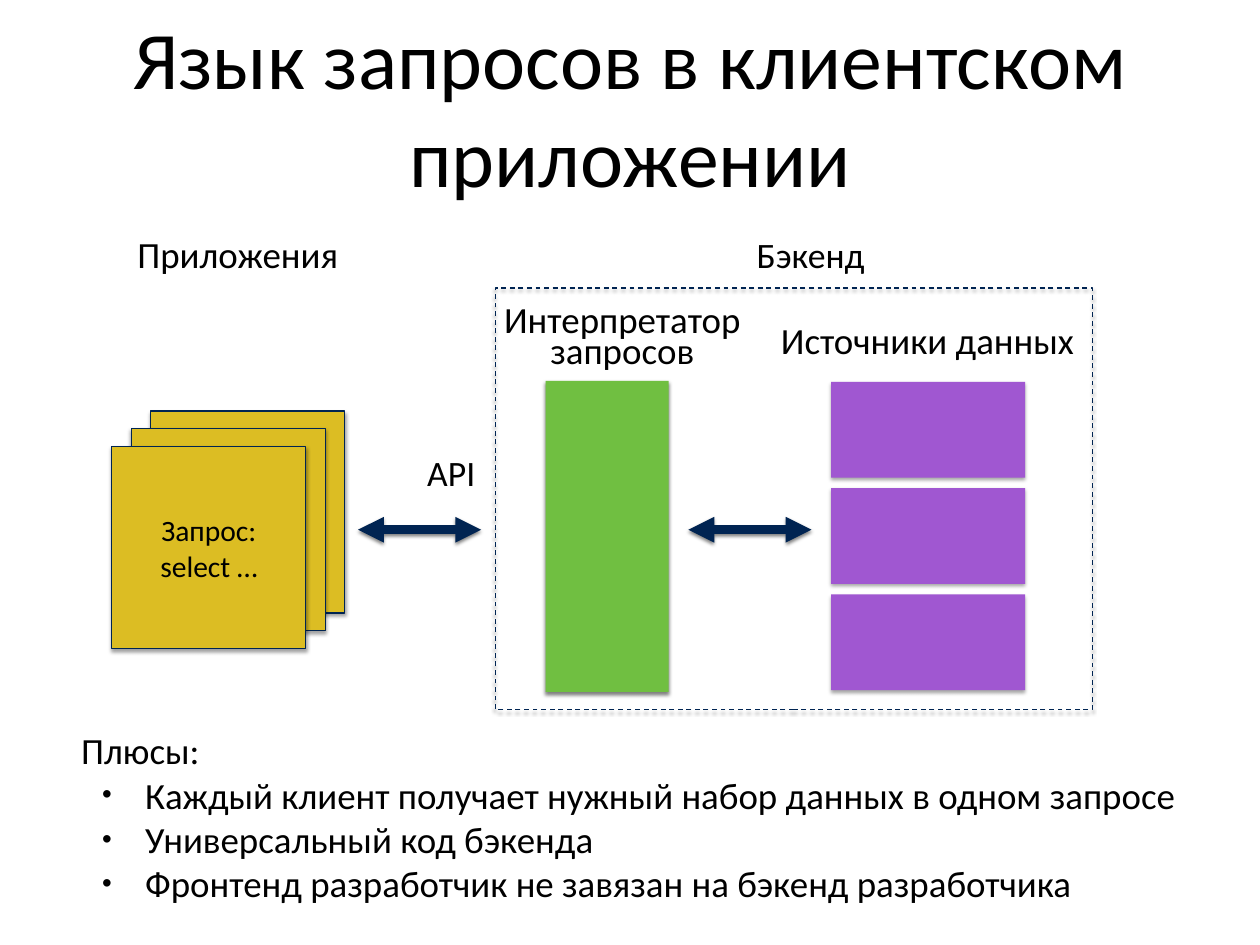
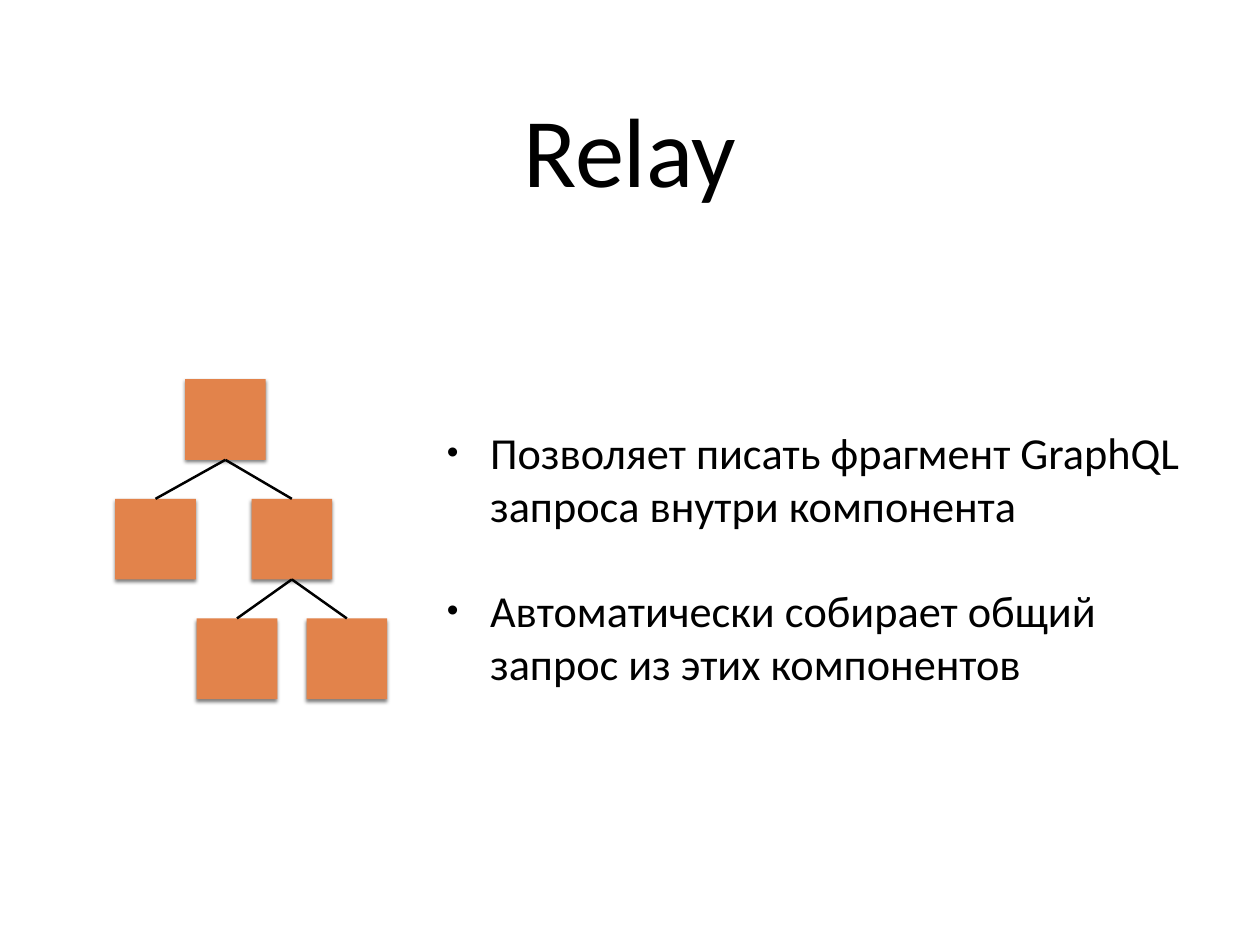
import pptx
import pptx.util
import pptx.dml.color
import pptx.enum.dml
import pptx.enum.shapes
import pptx.enum.text
import pptx.oxml
import pptx.oxml.ns

Pt = pptx.util.Pt
qn = pptx.oxml.ns.qn
ALIGN = pptx.enum.text.PP_ALIGN
FONT = "Calibri"
BLACK, NAVY = "000000", "002452"
GREEN, PURPLE, GOLD, ORANGE = "70BF41", "A057D1", "DCBD23", "E2834B"


def paint(color, value):
    color.rgb = pptx.dml.color.RGBColor.from_string(value)


def node(parent, tag, **attrs):
    child = parent.makeelement(qn(tag), attrs)
    parent.append(child)
    return child


def shade(shape, alpha):
    props = shape.element.spPr
    effect = props.find(qn("a:effectLst"))
    if effect is None:
        effect = node(props, "a:effectLst")
    if alpha:
        outer = node(effect, "a:outerShdw", blurRad=str(Pt(3)), dist=str(Pt(2)),
                     dir="5400000", rotWithShape="0")
        node(node(outer, "a:srgbClr", val=BLACK), "a:alpha", val=str(alpha * 1000))


def write(shape, text, size, align=ALIGN.CENTER, wrap=True, space=None):
    frame = shape.text_frame
    frame.text = text
    frame.word_wrap = wrap
    frame.auto_size = pptx.enum.text.MSO_AUTO_SIZE.NONE
    frame.vertical_anchor = pptx.enum.text.MSO_ANCHOR.MIDDLE
    frame.margin_left = frame.margin_right = Pt(4)
    frame.margin_top = frame.margin_bottom = Pt(4)
    for par in frame.paragraphs:
        par.alignment = align
        par.line_spacing = space
        for run in par.runs:
            run.font.name = FONT
            run.font.size = Pt(size)
            paint(run.font.color, BLACK)
    return frame.paragraphs


def title(slide, text, top, size):
    shape = slide.shapes.title
    shape.left, shape.top, shape.width, shape.height = Pt(75), Pt(top), Pt(874), Pt(170)
    write(shape, text, size)


def label(slide, text, box, size=30, **style):
    shape = slide.shapes.add_textbox(*map(Pt, box))
    return write(shape, text, size, **style)


def indent(par, left, first):
    props = par._p.get_or_add_pPr()
    props.set("marL", str(Pt(left)))
    props.set("indent", str(Pt(first)))
    return props


def bullet(par, left):
    props = indent(par, left, -35)
    node(props, "a:buSzPct", val="75000")
    node(props, "a:buFont", typeface="Arial")
    node(props, "a:buChar", char="•")


def block(slide, box, fill=None, line=None, alpha=50):
    kind = pptx.enum.shapes.MSO_SHAPE.RECTANGLE
    shape = slide.shapes.add_shape(kind, *map(Pt, box))
    if fill:
        shape.fill.solid()
        paint(shape.fill.fore_color, fill)
    else:
        shape.fill.background()
    if line:
        paint(shape.line.color, line)
        shape.line.width = Pt(1)
    else:
        shape.line.fill.background()
    shape.shadow.inherit = False
    shade(shape, alpha)
    return shape


def link(slide, start, end, color, width, heads=False, alpha=0):
    kind = pptx.enum.shapes.MSO_CONNECTOR.STRAIGHT
    line = slide.shapes.add_connector(kind, *map(Pt, start + end))
    paint(line.line.color, color)
    line.line.width = Pt(width)
    if heads:
        stroke = line.element.spPr.find(qn("a:ln"))
        for tag in ("a:headEnd", "a:tailEnd"):
            node(stroke, tag, type="triangle")
    shade(line, alpha)


def query(slide):
    title(slide, "Язык запросов в клиентском приложении", 1, 66.4)
    pars = label(slide, "Плюсы:\n"
                 "Каждый клиент получает нужный набор данных в одном запросе\n"
                 "Универсальный код бэкенда\n"
                 "Фронтенд разработчик не завязан на бэкенд разработчика",
                 (44, 544, 993, 239), align=ALIGN.LEFT)
    indent(pars[0], 0, 18)
    for par in pars[1:]:
        bullet(par, 70)

    block(slide, (443.5, 309.6, 100, 252.7), GREEN)
    for row in range(3):
        block(slide, (675.4, 310.3 + 86.4 * row, 157.7, 77.8), PURPLE, alpha=35)
    for left in (291, 559.5):
        link(slide, (left, 430.5), (left + 100, 430.5), NAVY, 7, heads=True, alpha=50)
    for step in range(3):
        card = block(slide, (122.5 - 15.8 * step, 334 + 14.4 * step, 157.7, 164.2),
                     GOLD, NAVY, 37)
    write(card, "Запрос:\nselect …", 24)
    frame = block(slide, (402.5, 234, 485.3, 342.7), line=NAVY)
    frame.line.dash_style = pptx.enum.dml.MSO_LINE.DASH

    for text, box, size, space in (
        ("Приложения", (107.3, 183.6, 172, 45.4), 30, None),
        ("Интерпретатор\nзапросов", (401.8, 240.5, 208, 70.6), 30, 0.7),
        ("Источники данных", (630, 253.4, 247.7, 45.4), 30, None),
        ("Бэкенд", (610.6, 184.3, 96.5, 44), 29, None),
        ("API", (342.7, 362.2, 48.2, 44), 29, None),
    ):
        label(slide, text, box, size, wrap=False, space=space)


def relay(slide):
    title(slide, "Relay", 35, 80)
    pars = label(slide, "Позволяет писать фрагмент GraphQL запроса внутри компонента\n"
                 "Автоматически собирает общий запрос из этих компонентов",
                 (359.3, 205.2, 629.3, 495.4), 36, align=ALIGN.LEFT)
    for par in pars:
        par.space_before = Pt(42)
        bullet(par, 35)

    side = 65.5
    nodes = [(183.2, 308.2), (126.4, 405.4), (237.2, 405.4),
             (192.6, 502.6), (281.9, 502.6)]
    for mid, top in nodes:
        block(slide, (mid - side / 2, top, side, side), ORANGE)
    for parent, child in ((0, 1), (0, 2), (2, 3), (2, 4)):
        mid, top = nodes[parent]
        link(slide, (mid, top + side), nodes[child], BLACK, 2)


def main():
    deck = pptx.Presentation()
    deck.slide_width, deck.slide_height = Pt(1024), Pt(768)
    for build in (query, relay):
        build(deck.slides.add_slide(deck.slide_layouts[5]))
    deck.save("out.pptx")


if __name__ == "__main__":
    main()
